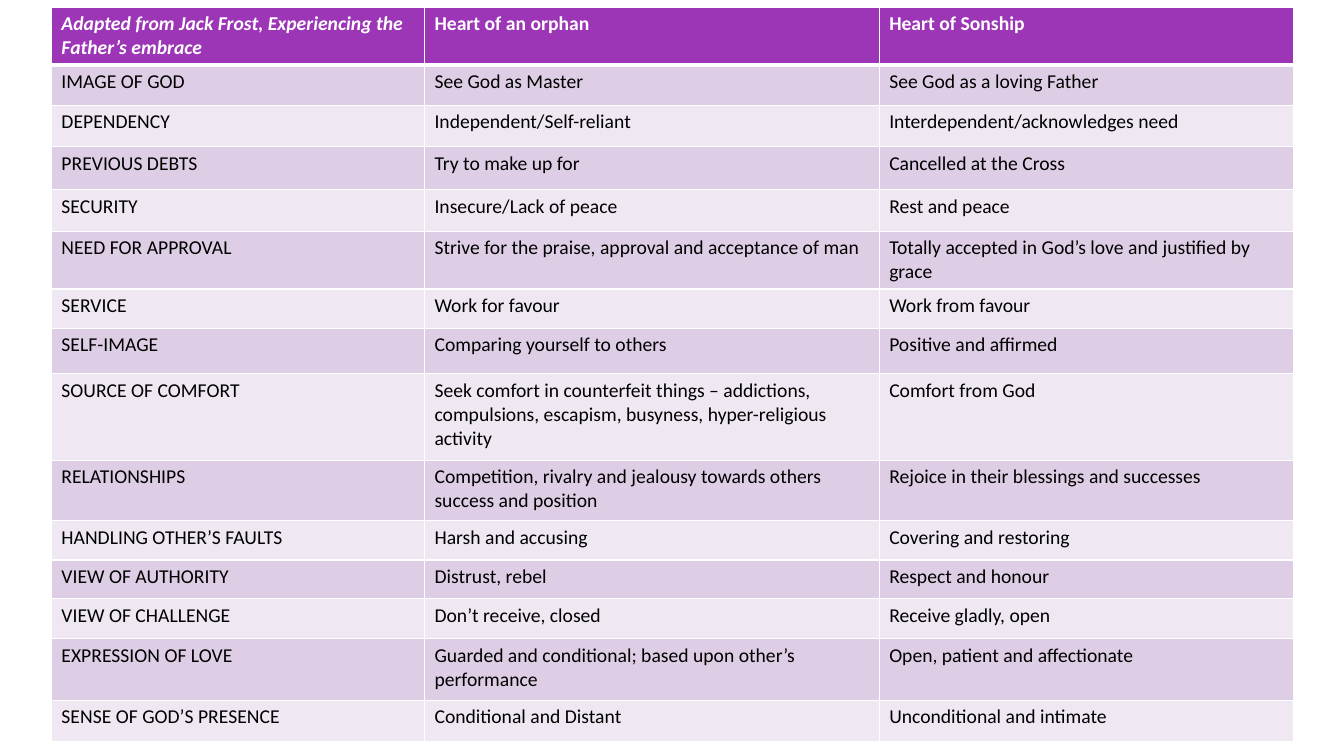
from lxml.etree import SubElement
from pptx import Presentation
from pptx.dml.color import RGBColor as RGB
from pptx.oxml.ns import qn
from pptx.util import Emu, Pt

PX = 9144
COLORS = {
    "header": "9C36B6",
    "odd": "DECEE5",
    "even": "EFE8F3",
    "white": "FFFFFF",
    "black": "000000",
}
COL_WIDTHS = [370, 451, 411]
ROWS = [
    (52, "Adapted from Jack Frost, Experiencing the Father’s embrace",
     "Heart of an orphan", "Heart of Sonship"),
    (40, "IMAGE OF GOD", "See God as Master", "See God as a loving Father"),
    (41, "DEPENDENCY", "Independent/Self-reliant", "Interdependent/acknowledges need"),
    (43, "PREVIOUS DEBTS", "Try to make up for", "Cancelled at the Cross"),
    (41, "SECURITY", "Insecure/Lack of peace", "Rest and peace"),
    (55, "NEED FOR APPROVAL", "Strive for the praise, approval and acceptance of man",
     "Totally accepted in God’s love and justified by grace"),
    (39, "SERVICE", "Work for favour", "Work from favour"),
    (45, "SELF-IMAGE", "Comparing yourself to others", "Positive and affirmed"),
    (86, "SOURCE OF COMFORT",
     "Seek comfort in counterfeit things – addictions, compulsions, escapism, "
     "busyness, hyper-religious activity", "Comfort from God"),
    (60, "RELATIONSHIPS",
     "Competition, rivalry and jealousy towards others success and position",
     "Rejoice in their blessings and successes"),
    (39, "HANDLING OTHER’S FAULTS", "Harsh and accusing", "Covering and restoring"),
    (38, "VIEW OF AUTHORITY", "Distrust, rebel", "Respect and honour"),
    (40, "VIEW OF CHALLENGE", "Don’t receive, closed", "Receive gladly, open"),
    (61, "EXPRESSION OF LOVE",
     "Guarded and conditional; based upon other’s performance",
     "Open, patient and affectionate"),
    (41, "SENSE OF GOD’S PRESENCE", "Conditional and Distant", "Unconditional and intimate"),
]


def px(n):
    return Emu(n * PX)


class Deck:
    font = "Calibri"
    size = Pt(14)

    def __init__(self, width, height):
        self.prs = Presentation()
        self.prs.slide_width, self.prs.slide_height = px(width), px(height)
        self.slide = self.prs.slides.add_slide(self.prs.slide_layouts[6])

    def color(self, name):
        return RGB.from_string(COLORS[name])

    def border(self, cell, side, width):
        tcPr = cell._tc.get_or_add_tcPr()
        ln = SubElement(tcPr, qn(f"a:ln{side}"), w=str(Pt(width)))
        fill = SubElement(ln, qn("a:solidFill"))
        SubElement(fill, qn("a:srgbClr"), val=COLORS["white"])

    def cell(self, cell, text, fill, color, bold=False, italic=False, top=1, bottom=1):
        for side, width in (("L", 1), ("R", 1), ("T", top), ("B", bottom)):
            self.border(cell, side, width)
        cell.fill.solid()
        cell.fill.fore_color.rgb = self.color(fill)
        r = cell.text_frame.paragraphs[0].add_run()
        r.text = text
        r.font.name, r.font.size = self.font, self.size
        r.font.bold, r.font.italic = bold, italic
        r.font.color.rgb = self.color(color)

    def table(self, x, y, widths, rows):
        height = sum(row[0] for row in rows)
        table = self.slide.shapes.add_table(
            len(rows), len(widths), px(x), px(y), px(sum(widths)), px(height)).table
        for col, width in zip(table.columns, widths):
            col.width = px(width)
        for i, (row_height, *texts) in enumerate(rows):
            table.rows[i].height = px(row_height)
            for j, text in enumerate(texts):
                cell = table.cell(i, j)
                if i == 0:
                    self.cell(cell, text, "header", "white", bold=True,
                              italic=j == 0, bottom=3)
                else:
                    self.cell(cell, text, "odd" if i % 2 else "even", "black",
                              top=3 if i == 1 else 1)


def main():
    deck = Deck(1333, 750)
    deck.table(51, 7, COL_WIDTHS, ROWS)
    deck.prs.save("out.pptx")


if __name__ == "__main__":
    main()
